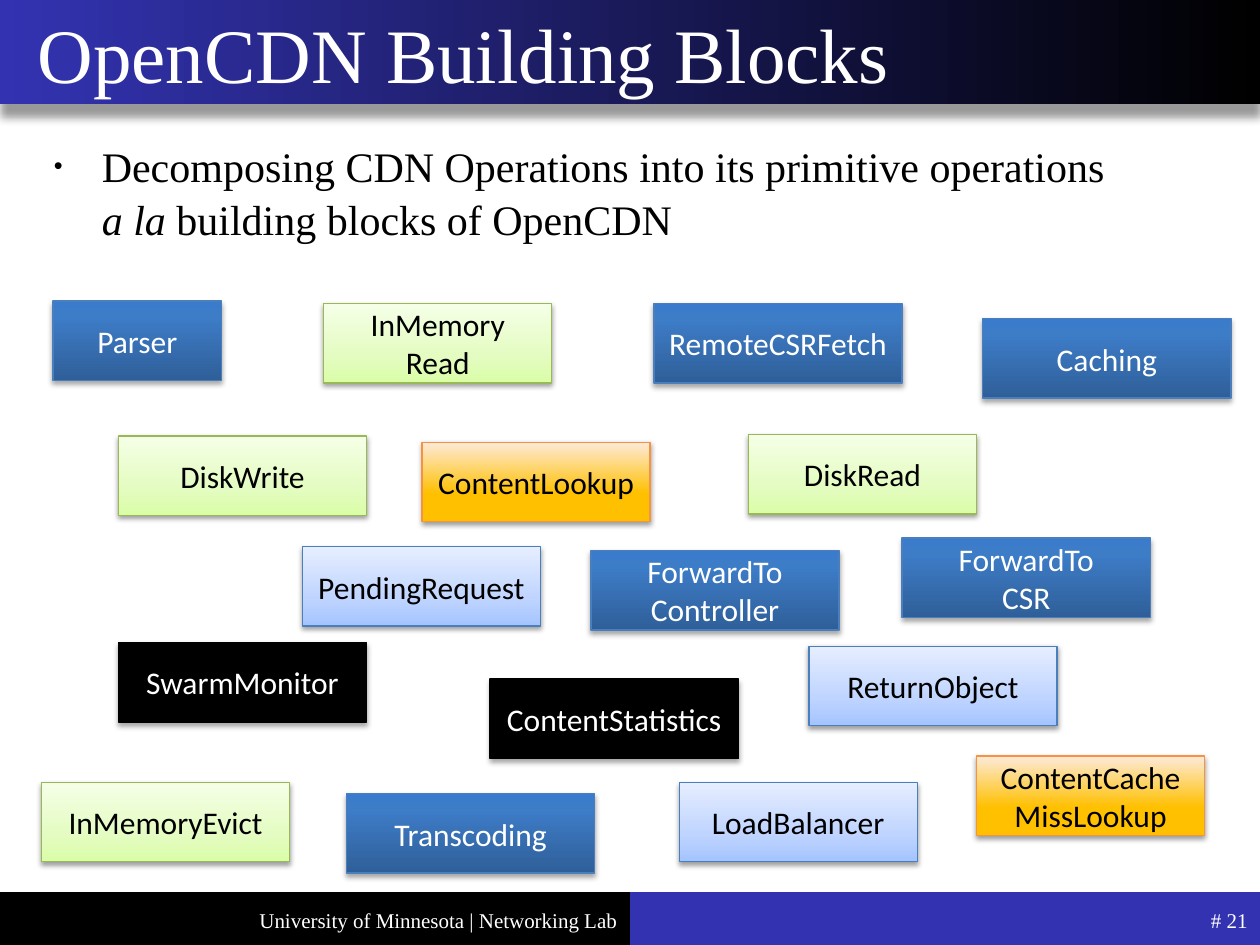
from lxml.etree import SubElement as Sub
from pptx import Presentation
from pptx.dml.color import RGBColor as RGB
from pptx.enum.shapes import MSO_SHAPE as Shape
from pptx.enum.text import MSO_ANCHOR as Anchor, PP_ALIGN as Align
from pptx.oxml.ns import qn
from pptx.util import Inches, Pt

COLORS = {"black": "000000", "white": "FFFFFF", "navy": "3333B2",
          "blue": "4B7EBC", "green": "98B955", "orange": "F69240"}
SERIF = "Times New Roman"

# style: fill stops, line colour, text colour
STYLES = {
    "blue": ([(0, "2F5F99"), (80, "3D7CC7"), (100, "3A7CCB")], "blue", "white"),
    "green": ([(0, "DAFDA7"), (35, "E4FCC2"), (100, "F5FFE7")], "green", "black"),
    "pale": ([(0, "A4C4FF"), (35, "BFD4FF"), (100, "E6EEFF")], "blue", "black"),
    "orange": ([(0, "FFC000"), (35, "FFC000"), (100, "FDEADA")], "orange", "black"),
    "black": ("black", "black", "white"),
}
HEIGHT = 0.63
# text, style, left, top, width
BLOCKS = [
    ("Parser", "blue", 0.42, 2.39, 1.34),
    ("ContentLookup", "orange", 3.35, 3.51, 1.81),
    ("InMemory\nRead", "green", 2.57, 2.41, 1.81),
    ("DiskRead", "green", 5.94, 3.45, 1.81),
    ("PendingRequest", "pale", 2.4, 4.34, 1.89),
    ("LoadBalancer", "pale", 5.39, 6.21, 1.89),
    ("ContentStatistics", "black", 3.89, 5.39, 1.97),
    ("Caching", "blue", 7.8, 2.53, 1.97),
    ("InMemoryEvict", "green", 0.33, 6.21, 1.97),
    ("DiskWrite", "green", 0.94, 3.46, 1.97),
    ("ForwardTo\nController", "blue", 4.69, 4.37, 1.97),
    ("RemoteCSRFetch", "blue", 5.19, 2.41, 1.97),
    ("ReturnObject", "pale", 6.42, 5.13, 1.97),
    ("SwarmMonitor", "black", 0.94, 5.1, 1.97),
    ("ForwardTo\nCSR", "blue", 7.16, 4.27, 1.97),
    ("ContentCache\nMissLookup", "orange", 7.75, 6, 1.81),
    ("Transcoding", "blue", 2.75, 6.3, 1.97),
]

deck = Presentation()
deck.slide_width, deck.slide_height = Inches(10), Inches(7.5)
slide = deck.slides.add_slide(deck.slide_layouts[6])


def add_rect(box, paint, angle=90, shade=None):
    """Add a rectangle; paint is a colour name or a list of gradient stops,
    shade is (alpha %, blur pt, distance pt)."""
    rect = slide.shapes.add_shape(Shape.RECTANGLE, *map(Inches, box))
    rect.shadow.inherit = False
    rect.line.fill.background()
    if isinstance(paint, str):
        rect.fill.solid()
        rect.fill.fore_color.rgb = RGB.from_string(COLORS[paint])
    else:
        rect.fill.gradient()
        rect.fill.gradient_angle = angle
        stops = rect._element.spPr.find(".//" + qn("a:gsLst"))
        for old in list(stops):
            stops.remove(old)
        for pos, color in paint:
            stop = Sub(stops, qn("a:gs"), pos=str(pos * 1000))
            Sub(stop, qn("a:srgbClr"), val=color)
    if shade:
        alpha, blur, dist = shade
        effects = rect._element.spPr.find(qn("a:effectLst"))
        outer = Sub(effects, qn("a:outerShdw"), blurRad=str(Pt(blur)),
                    dist=str(Pt(dist)), dir="5400000", rotWithShape="0")
        tint = Sub(outer, qn("a:srgbClr"), val=COLORS["black"])
        Sub(tint, qn("a:alpha"), val=str(alpha * 1000))
    return rect


def set_text(shape, text, size, font, color, align, anchor=Anchor.MIDDLE):
    frame = shape.text_frame
    frame.word_wrap = True
    frame.vertical_anchor = anchor
    frame.text = text
    for para in frame.paragraphs:
        para.alignment = align
        for run in para.runs:
            run.font.size, run.font.name = Pt(size), font
            run.font.color.rgb = RGB.from_string(COLORS[color])
    return frame


# Header and footer bars
add_rect((5, 7.08, 5, 0.42), "navy")
add_rect((0, 7.08, 5, 0.42), "black")
add_rect((0, 0, 10, 0.83), [(0, COLORS["black"]), (100, COLORS["navy"])],
         angle=180, shade=(40, 5, 7))

# Title and footer texts
LABELS = [
    ("University of Minnesota | Networking Lab", (1.17, 7.1, 3.83, 0.4), 12, Align.RIGHT),
    ("# 21", (8.83, 7.1, 1.17, 0.4), 12, Align.RIGHT),
    ("OpenCDN Building Blocks", (0.2, 0, 9.55, 0.83), 44, Align.LEFT),
]
for text, box, size, align in LABELS:
    label = slide.shapes.add_textbox(*map(Inches, box))
    set_text(label, text, size, SERIF, "white", align)

# Bulleted statement
body = slide.shapes.add_textbox(*map(Inches, (0.33, 1.05, 9.17, 1.28)))
intro = "Decomposing CDN Operations into its primitive operations \v"
frame = set_text(body, intro, 24, SERIF, "black", Align.LEFT, Anchor.TOP)
para = frame.paragraphs[0]
para.line_spacing = 1.05
props = para._p.get_or_add_pPr()
props.set("marL", str(Inches(0.38)))
props.set("indent", str(-Inches(0.38)))
Sub(props, qn("a:buSzPct"), val="60000")
Sub(props, qn("a:buFont"), typeface="Arial")
Sub(props, qn("a:buChar"), char="•")
for text, slant in [("a la", True), (" building blocks of OpenCDN", False)]:
    run = para.add_run()
    run.text = text
    run.font.size, run.font.name, run.font.italic = Pt(24), SERIF, slant
    run.font.color.rgb = RGB.from_string(COLORS["black"])

# Building blocks
for text, style, left, top, width in BLOCKS:
    paint, edge, ink = STYLES[style]
    shade = (35, 3.1, 1.8) if ink == "white" else (38, 3.1, 1.6)
    block = add_rect((left, top, width, HEIGHT), paint, shade=shade)
    block.line.color.rgb = RGB.from_string(COLORS[edge])
    block.line.width = Pt(0.75)
    set_text(block, text, 18, "Calibri", ink, Align.CENTER)

deck.save("out.pptx")
